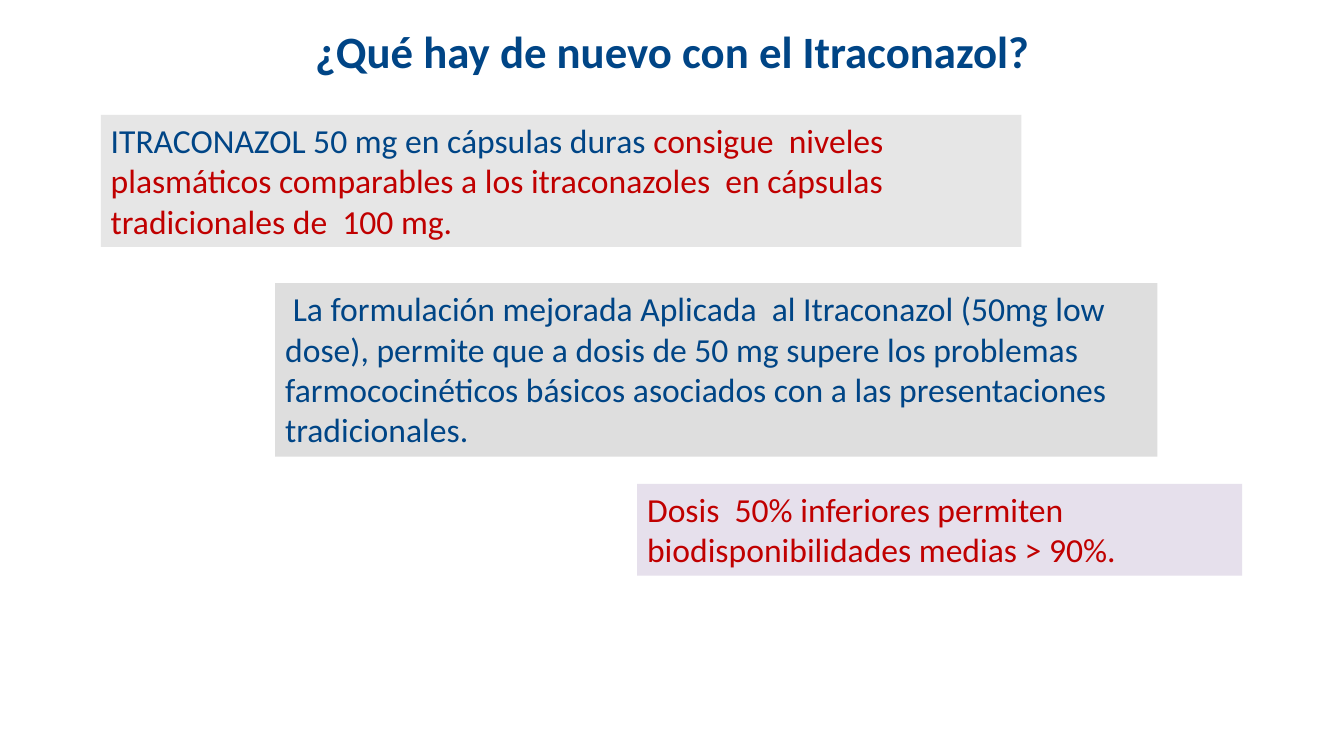
from typing import NamedTuple

from pptx import Presentation
from pptx.dml.color import RGBColor
from pptx.enum.shapes import MSO_SHAPE
from pptx.enum.text import MSO_ANCHOR, PP_ALIGN
from pptx.slide import Slide
from pptx.text.text import TextFrame
from pptx.util import Inches, Pt

RECTANGLE = MSO_SHAPE.RECTANGLE
TOP, MIDDLE = MSO_ANCHOR.TOP, MSO_ANCHOR.MIDDLE
LEFT, CENTER = PP_ALIGN.LEFT, PP_ALIGN.CENTER

FONT = "Calibri"
NAVY = "004586"
RED = "C00000"
LIGHT_BLUE = "287AC8"


class Span(NamedTuple):
    text: str
    color: str


class Statement(NamedTuple):
    left: float
    top: float
    width: float
    height: float
    fill: str
    spans: list[Span]


STATEMENTS = [
    Statement(1, 1.14, 9.13, 1.31, "E6E6E6", [
        Span("ITRACONAZOL 50 mg en cápsulas duras", NAVY),
        Span(" consigue  niveles plasmáticos comparables a los itraconazoles  "
             "en cápsulas tradicionales de  100 mg.", RED),
    ]),
    Statement(2.73, 2.81, 8.75, 1.72, "DEDEDE", [
        Span(" ", LIGHT_BLUE),
        Span("La formulación mejorada Aplicada  al Itraconazol (50mg low dose), "
             "permite que a dosis de 50 mg supere los problemas farmococinéticos "
             "básicos asociados con a las presentaciones tradicionales.", NAVY),
    ]),
    Statement(6.32, 4.8, 6, 0.91, "E6E0EC", [
        Span("Dosis  50% inferiores permiten biodisponibilidades medias > 90%.", RED),
    ]),
]


def rgb(hex_color: str) -> RGBColor:
    return RGBColor.from_string(hex_color)


def write_spans(frame: TextFrame, spans: list[Span], size: float,
                align: PP_ALIGN, anchor: MSO_ANCHOR, bold: bool = False) -> None:
    frame.word_wrap = True
    frame.vertical_anchor = anchor
    paragraph = frame.paragraphs[0]
    paragraph.alignment = align
    for span in spans:
        run = paragraph.add_run()
        run.text = span.text
        run.font.name = FONT
        run.font.size = Pt(size)
        run.font.bold = bold
        run.font.color.rgb = rgb(span.color)


def add_title(slide: Slide, text: str) -> None:
    title = slide.shapes.add_textbox(Inches(0.67), Inches(0.17), Inches(12), Inches(0.66))
    write_spans(title.text_frame, [Span(text, NAVY)], 32, CENTER, MIDDLE, bold=True)


def add_statement(slide: Slide, statement: Statement) -> None:
    panel = slide.shapes.add_shape(
        RECTANGLE, Inches(statement.left), Inches(statement.top),
        Inches(statement.width), Inches(statement.height))
    panel.shadow.inherit = False
    panel.fill.solid()
    panel.fill.fore_color.rgb = rgb(statement.fill)
    panel.line.fill.background()
    write_spans(panel.text_frame, statement.spans, 24, LEFT, TOP)


def main() -> None:
    presentation = Presentation()
    presentation.slide_width = Inches(13.33)
    presentation.slide_height = Inches(7.5)
    slide = presentation.slides.add_slide(presentation.slide_layouts[6])
    add_title(slide, "¿Qué hay de nuevo con el Itraconazol?")
    for statement in STATEMENTS:
        add_statement(slide, statement)
    presentation.save("out.pptx")


if __name__ == "__main__":
    main()
